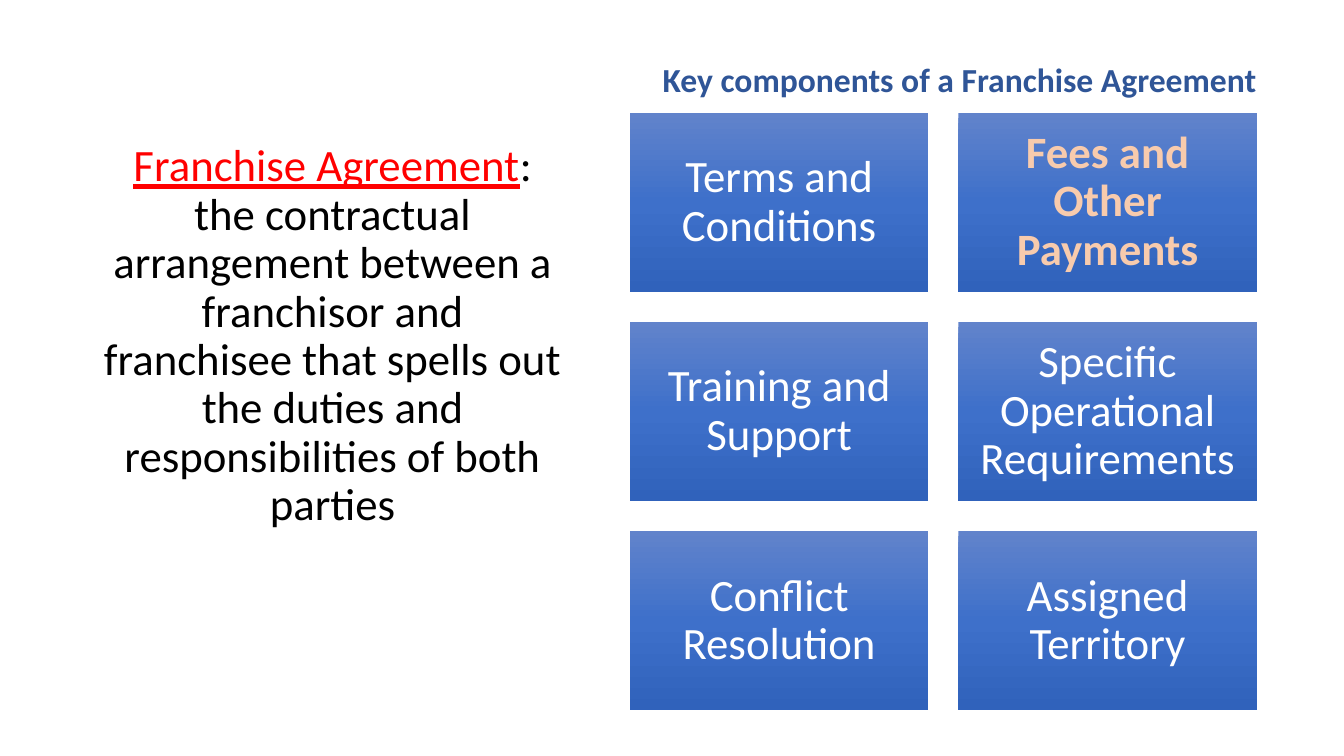
from copy import deepcopy
from lxml import etree
from pptx import Presentation
from pptx.dml.color import RGBColor
from pptx.enum.shapes import MSO_SHAPE
from pptx.enum.text import MSO_ANCHOR, MSO_AUTO_SIZE, PP_ALIGN
from pptx.oxml.ns import qn
from pptx.util import Pt

COLORS = {
    "red": "FF0000", "black": "000000", "white": "FFFFFF", "heading": "2F5597",
    "peach": "F8CBAD", "orange": "ED7D31",
    "top": "6183CB", "middle": "3E70CA", "bottom": "3062BB",
}


def style_run(r, size, color, bold=False, underline=False):
    r.font.name = "Calibri"
    r.font.size = Pt(size)
    r.font.bold = bold
    r.font.underline = underline
    r.font.color.rgb = RGBColor.from_string(COLORS[color])


def place(sp, left, top, width, height):
    sp.left, sp.top, sp.width, sp.height = Pt(left), Pt(top), Pt(width), Pt(height)
    tf = sp.text_frame
    tf.word_wrap = True
    tf.auto_size = MSO_AUTO_SIZE.NONE
    tf.vertical_anchor = MSO_ANCHOR.TOP
    tf.paragraphs[0].alignment = PP_ALIGN.CENTER
    return tf.paragraphs[0]


prs = Presentation()
prs.slide_width, prs.slide_height = Pt(960), Pt(540)
s = prs.slides.add_slide(prs.slide_layouts[1])
title, body = s.placeholders[0], s.placeholders[1]

# Heading
p = place(title, 426.24, 38.16, 518.4, 36)
p.text = "Key components of a Franchise Agreement"
style_run(p.runs[0], 24, "heading", bold=True)

# Definition, without a bullet
p = place(body, 66.24, 98.64, 342.72, 299.52)
p.line_spacing = 0.9
p.space_before = Pt(10)
pPr = p._p.get_or_add_pPr()
pPr.set("marL", "0")
pPr.set("indent", "0")
etree.SubElement(pPr, qn("a:buNone"))
r = p.add_run()
r.text = "Franchise Agreement"
style_run(r, 32, "red", underline=True)
r = p.add_run()
r.text = (": the contractual arrangement between a franchisor and franchisee "
          "that spells out the duties and responsibilities of both parties")
style_run(r, 32, "black")

# Grid of components
components = [
    "Terms and Conditions", "Fees and Other Payments",
    "Training and Support", "Specific Operational Requirements",
    "Conflict Resolution", "Assigned Territory",
]
highlighted = "Fees and Other Payments"
LEFT, TOP, WIDTH, HEIGHT, GAP = 450, 80.64, 213.2, 128, 21.4

for i, component in enumerate(components):
    row, col = divmod(i, 2)
    sp = s.shapes.add_shape(MSO_SHAPE.RECTANGLE, 0, 0, 0, 0)
    p = place(sp, LEFT + col * (WIDTH + GAP), TOP + row * (HEIGHT + GAP), WIDTH, HEIGHT)
    sp.shadow.inherit = False
    sp.line.fill.background()

    # Three-stop vertical gradient
    sp.fill.gradient()
    sp.fill.gradient_angle = 270
    first = sp._element.spPr.find(".//" + qn("a:gs"))
    first.addnext(deepcopy(first))
    for stop, position, color in zip(sp.fill.gradient_stops, (0, 0.5, 1),
                                     ("top", "middle", "bottom")):
        stop.position = position
        stop.color.rgb = RGBColor.from_string(COLORS[color])

    # Label
    tf = sp.text_frame
    tf.vertical_anchor = MSO_ANCHOR.MIDDLE
    tf.margin_left = tf.margin_right = tf.margin_top = tf.margin_bottom = Pt(9.6)
    p.text = component
    p.line_spacing = 0.9
    r = p.runs[0]
    if component == highlighted:
        style_run(r, 32, "peach", bold=True)
        ln = etree.Element(qn("a:ln"), w=str(Pt(1.75)))
        fill = etree.SubElement(ln, qn("a:solidFill"))
        etree.SubElement(fill, qn("a:srgbClr"), val=COLORS["orange"])
        r.font._element.insert(0, ln)
    else:
        style_run(r, 32, "white")

prs.save("out.pptx")
